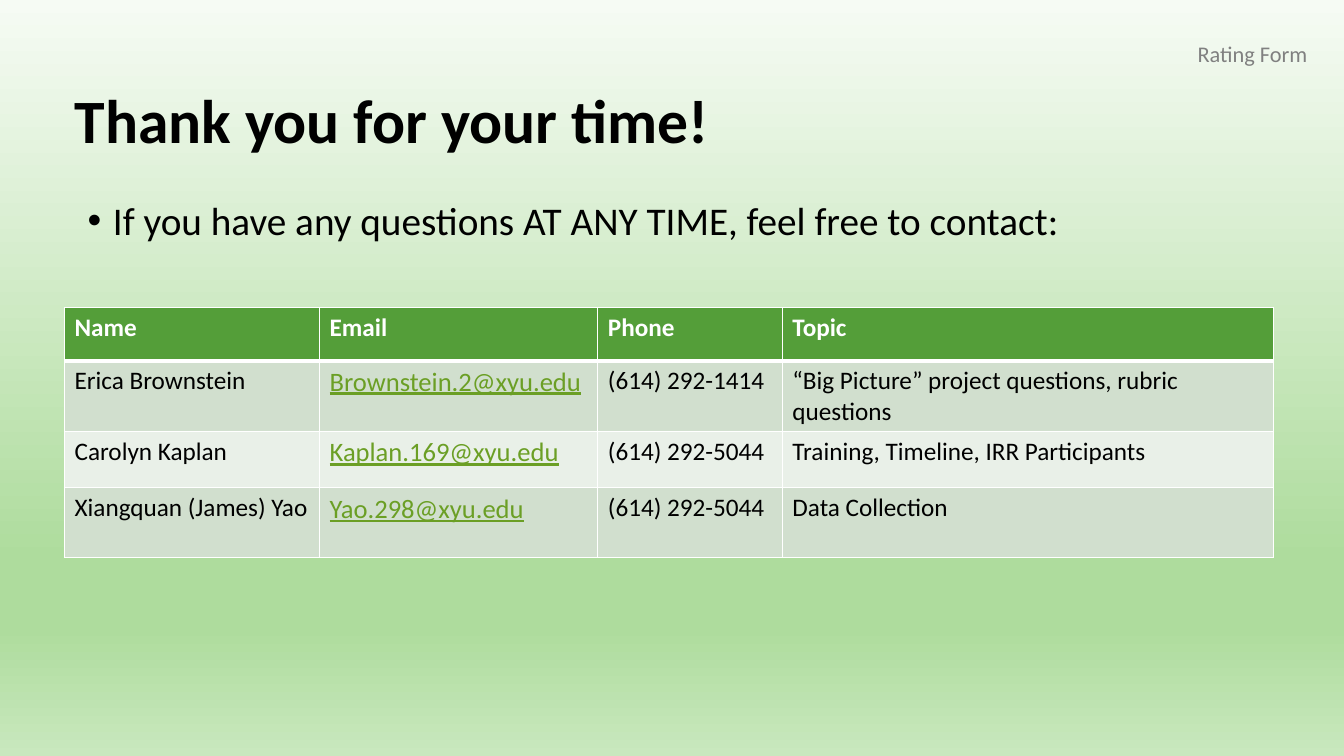
from copy import deepcopy
from dataclasses import dataclass

from lxml.etree import SubElement
from pptx import Presentation
from pptx.dml.color import RGBColor
from pptx.enum.text import MSO_ANCHOR, MSO_AUTO_SIZE, PP_ALIGN
from pptx.oxml import parse_xml
from pptx.oxml.ns import nsdecls, qn
from pptx.util import Inches, Pt


@dataclass(frozen=True)
class Theme:
    font: str = "Calibri"
    text: str = "000000"
    muted: str = "808080"
    light: str = "FFFFFF"
    link: str = "6B9F25"
    header: str = "549E39"
    bands: tuple = ("D1DFCE", "E9F0E8")
    backdrop: tuple = ((0, "F6FBF4"), (0.74, "AEDC9D"), (0.83, "AEDC9D"), (1, "C9E8BE"))
    title_size: int = 44
    body_size: int = 28
    label_size: int = 16
    table_size: int = 18
    link_size: int = 19


theme = Theme()


def style(paragraph, size, color, bold=False, underline=False):
    font = paragraph.font
    font.name = theme.font
    font.size = Pt(size)
    font.bold = bold
    font.underline = underline
    font.color.rgb = RGBColor.from_string(color)


def add_borders(cell, top, bottom):
    properties = cell._tc.get_or_add_tcPr()
    sides = (("lnL", 1), ("lnR", 1), ("lnT", top), ("lnB", bottom))
    for position, (side, width) in enumerate(sides):
        properties.insert(position, parse_xml(
            f'<a:{side} {nsdecls("a")} w="{Pt(width)}"><a:solidFill>'
            f'<a:srgbClr val="{theme.light}"/></a:solidFill></a:{side}>'))


prs = Presentation()
prs.slide_width = Inches(13.33)
prs.slide_height = Inches(7.5)
slide = prs.slides.add_slide(prs.slide_layouts[1])

backdrop = slide.background.fill
backdrop.gradient()
backdrop.gradient_angle = 270
stop_list = slide.element.find(".//" + qn("a:gsLst"))
while len(stop_list) < len(theme.backdrop):
    stop_list.append(deepcopy(stop_list[0]))
for stop, (position, color) in zip(backdrop.gradient_stops, theme.backdrop):
    stop.position = position
    stop.color.rgb = RGBColor.from_string(color)

form_label = slide.shapes.add_textbox(Inches(11.78), Inches(0.35), Inches(1.29), Inches(0.37))
form_label.text_frame.word_wrap = False
form_label.text_frame.text = "Rating Form"
style(form_label.text_frame.paragraphs[0], theme.label_size, theme.muted)

thanks = slide.shapes.title
thanks.left, thanks.top = Inches(0.64), Inches(0.5)
thanks.width, thanks.height = Inches(11.5), Inches(1.45)
thanks.text_frame.text = "Thank you for your time!"
thanks.text_frame.auto_size = MSO_AUTO_SIZE.NONE
thanks.text_frame.vertical_anchor = MSO_ANCHOR.MIDDLE
thanks_line = thanks.text_frame.paragraphs[0]
thanks_line.alignment = PP_ALIGN.LEFT
thanks_line.line_spacing = 0.9
style(thanks_line, theme.title_size, theme.text, bold=True)

invitation = slide.placeholders[1]
invitation.left, invitation.top = Inches(0.77), Inches(1.95)
invitation.width, invitation.height = Inches(13.33), Inches(4.76)
invitation.text_frame.text = "If you have any questions AT ANY TIME, feel free to contact:"
invitation.text_frame.auto_size = MSO_AUTO_SIZE.NONE
invitation_line = invitation.text_frame.paragraphs[0]
invitation_line.line_spacing = 0.9
invitation_line.space_before = Pt(10)
style(invitation_line, theme.body_size, theme.text)
bullet_properties = invitation_line._p.get_or_add_pPr()
bullet_properties.set("marL", str(Inches(0.25)))
bullet_properties.set("indent", str(-Inches(0.25)))
bullet_font = SubElement(bullet_properties, qn("a:buFont"), typeface="Arial")
bullet_font.addnext(parse_xml(f'<a:buChar {nsdecls("a")} char="•"/>'))
bullet_properties.append(bullet_properties.find(qn("a:defRPr")))

contacts = (
    ("Name", "Email", "Phone", "Topic"),
    ("Erica Brownstein", "Brownstein.2@xyu.edu", "(614) 292-1414",
     "“Big Picture” project questions, rubric questions"),
    ("Carolyn Kaplan", "Kaplan.169@xyu.edu", "(614) 292-5044",
     "Training, Timeline, IRR Participants"),
    ("Xiangquan (James) Yao", "Yao.298@xyu.edu", "(614) 292-5044", "Data Collection"),
)
column_widths = (2.53, 2.76, 1.83, 4.87)
row_heights = (0.53, 0.69, 0.56, 0.69)
directory = slide.shapes.add_table(
    len(contacts), len(column_widths), Inches(0.64), Inches(3.05),
    Inches(sum(column_widths)), Inches(sum(row_heights))).table
for column, width in zip(directory.columns, column_widths):
    column.width = Inches(width)

for row, (contact, height) in enumerate(zip(contacts, row_heights)):
    directory.rows[row].height = Inches(height)
    is_header = row == 0
    for column, entry in enumerate(contact):
        cell = directory.cell(row, column)
        cell.text = entry
        cell.fill.solid()
        cell.fill.fore_color.rgb = RGBColor.from_string(
            theme.header if is_header else theme.bands[(row - 1) % 2])
        add_borders(cell, top=3 if row == 1 else 1, bottom=3 if is_header else 1)
        entry_line = cell.text_frame.paragraphs[0]
        if is_header:
            style(entry_line, theme.table_size, theme.light, bold=True)
        elif contacts[0][column] == "Email":
            style(entry_line, theme.link_size, theme.link, underline=True)
        else:
            style(entry_line, theme.table_size, theme.text)

prs.save("out.pptx")
